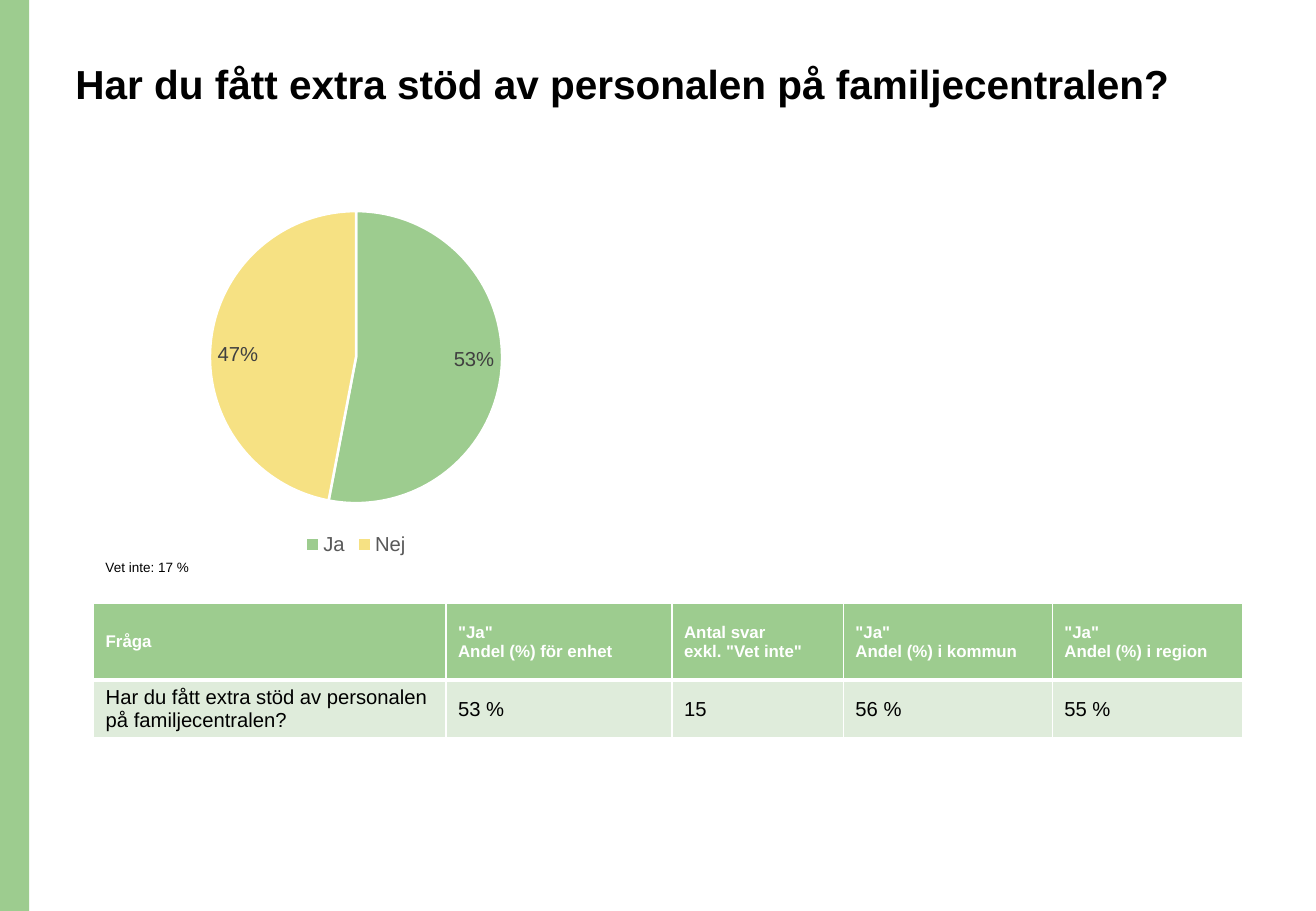
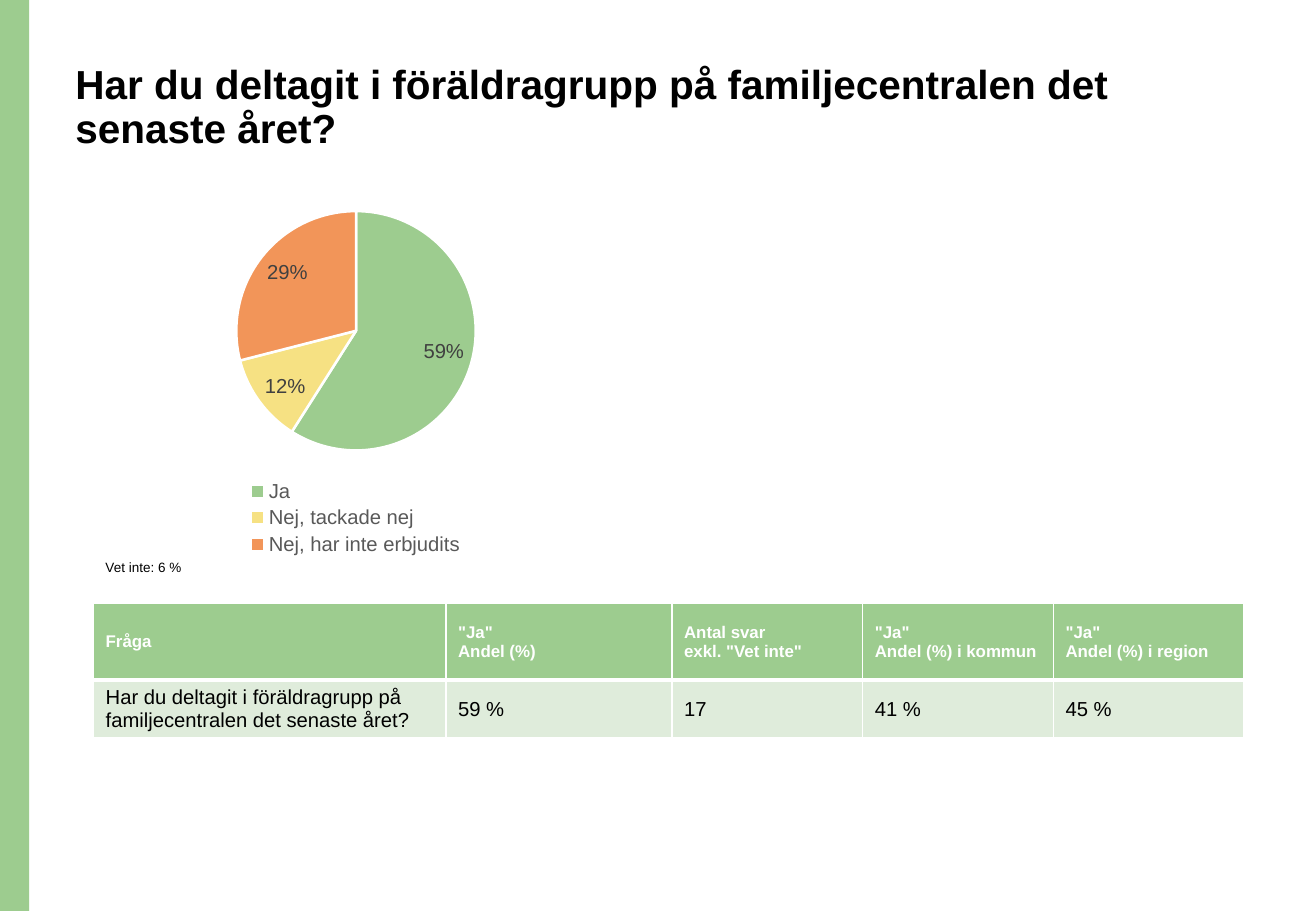
from lxml import etree
from pptx import Presentation
from pptx.chart.data import CategoryChartData
from pptx.dml.color import RGBColor
from pptx.enum.chart import XL_CHART_TYPE, XL_LABEL_POSITION, XL_LEGEND_POSITION
from pptx.enum.shapes import MSO_SHAPE
from pptx.enum.text import MSO_ANCHOR, MSO_AUTO_SIZE, PP_ALIGN
from pptx.oxml.ns import qn
from pptx.util import Pt

PIE = XL_CHART_TYPE.PIE
INSIDE_END = XL_LABEL_POSITION.INSIDE_END
BOTTOM = XL_LEGEND_POSITION.BOTTOM
RECTANGLE = MSO_SHAPE.RECTANGLE
TOP, MIDDLE = MSO_ANCHOR.TOP, MSO_ANCHOR.MIDDLE
NO_AUTOFIT = MSO_AUTO_SIZE.NONE
LEFT = PP_ALIGN.LEFT

GREEN = RGBColor(0x9D, 0xCC, 0x8F)
PALE_GREEN = RGBColor(0xDF, 0xEC, 0xDB)
YELLOW = RGBColor(0xF6, 0xE1, 0x83)
ORANGE = RGBColor(0xF2, 0x95, 0x59)
WHITE = RGBColor(0xFF, 0xFF, 0xFF)
BLACK = RGBColor(0, 0, 0)
LABEL_GREY = RGBColor(0x40, 0x40, 0x40)
LEGEND_GREY = RGBColor(0x59, 0x59, 0x59)
SLICE_COLORS = (GREEN, YELLOW, ORANGE)

FONT = "Arial"
PERCENT_FORMAT = '[<0.01]"";[>0.01]0%'
EMU_PER_PX = 9144
WIDTH, HEIGHT = 1083, 750
BAND_WIDTH = 24
TITLE_AREA = (52, 48, 934, 102)
CHART_AREA = (122, 160, 342, 301)
NOTE_AREA = (77, 449, 210, 48)
TABLE_LEFT, TABLE_TOP = 77, 497
ROW_HEIGHTS = (63, 45)

QUESTIONS = [
    {
        "title": "Har du fått extra stöd av personalen på familjecentralen?",
        "answers": {"Ja": 0.53, "Nej": 0.47},
        "note": "Vet inte: 17 %",
        "unit_header": '"Ja"\nAndel (%) för enhet',
        "results": ["53 %", "15", "56 %", "55 %"],
        "columns": [290, 186, 141, 172, 157],
    },
    {
        "title": "Har du deltagit i föräldragrupp på familjecentralen det senaste året?",
        "answers": {"Ja": 0.59, "Nej, tackade nej": 0.12, "Nej, har inte erbjudits": 0.29},
        "note": "Vet inte: 6 %",
        "unit_header": '"Ja"\nAndel (%)',
        "results": ["59 %", "17", "41 %", "45 %"],
        "columns": [290, 186, 157, 157, 157],
    },
]
OTHER_HEADERS = [
    'Antal svar\nexkl. "Vet inte"',
    '"Ja"\nAndel (%) i kommun',
    '"Ja"\nAndel (%) i region',
]


def px(*lengths):
    return [length * EMU_PER_PX for length in lengths]


def set_font(font, size, color, bold=False):
    font.name, font.size, font.bold = FONT, Pt(size), bold
    font.color.rgb = color


def add_band(deck, page):
    band = page.shapes.add_shape(RECTANGLE, *px(0, 0, BAND_WIDTH, HEIGHT))
    band.shadow.inherit = False
    band.fill.solid()
    band.fill.fore_color.rgb = GREEN
    band.line.fill.background()
    deck.slide_master.shapes.element.insert(2, band.element)


def add_title(page, text):
    title = page.shapes.title
    title.left, title.top, title.width, title.height = px(*TITLE_AREA)
    frame = title.text_frame
    frame.text = text
    frame.vertical_anchor = TOP
    frame.auto_size = NO_AUTOFIT
    para = frame.paragraphs[0]
    para.alignment = LEFT
    para.line_spacing = 0.9
    set_font(para.font, 24, BLACK, True)


def add_pie(page, answers):
    data = CategoryChartData()
    data.categories = list(answers)
    data.add_series("Series 1", list(answers.values()))
    chart = page.shapes.add_chart(PIE, *px(*CHART_AREA), data).chart
    set_font(chart.font, 10, BLACK)
    chart.has_title = False
    chart.has_legend = True
    chart.legend.position = BOTTOM
    chart.legend.include_in_layout = False
    set_font(chart.legend.font, 12, LEGEND_GREY)
    plot = chart.plots[0]
    plot.vary_by_categories = True
    series = plot.series[0]
    for index, color in enumerate(SLICE_COLORS[:len(answers)]):
        style = series.points[index].format
        style.fill.solid()
        style.fill.fore_color.rgb = color
        style.line.color.rgb = WHITE
        style.line.width = Pt(1.5)
    labels = series.data_labels
    labels.show_value = True
    labels.show_percentage = False
    labels.number_format = PERCENT_FORMAT
    labels.number_format_is_linked = False
    labels.position = INSIDE_END
    set_font(labels.font, 12, LABEL_GREY)


def set_borders(cell, top, bottom):
    properties = cell._tc.get_or_add_tcPr()
    widths = {"lnL": 1, "lnR": 1, "lnT": top, "lnB": bottom}
    for index, (side, width) in enumerate(widths.items()):
        line = etree.Element(qn(f"a:{side}"), w=str(Pt(width)))
        fill = etree.SubElement(line, qn("a:solidFill"))
        etree.SubElement(fill, qn("a:srgbClr"), val=str(WHITE))
        properties.insert(index, line)


def add_result_table(page, question):
    columns = question["columns"]
    rows = [
        ["Fråga", question["unit_header"], *OTHER_HEADERS],
        [question["title"], *question["results"]],
    ]
    styles = [(GREEN, 10, WHITE, True, 1, 3), (PALE_GREEN, 12, BLACK, False, 3, 1)]
    area = px(TABLE_LEFT, TABLE_TOP, sum(columns), sum(ROW_HEIGHTS))
    table = page.shapes.add_table(len(rows), len(columns), *area).table
    for column, width in zip(table.columns, px(*columns)):
        column.width = width
    for row, height, texts, style in zip(table.rows, px(*ROW_HEIGHTS), rows, styles):
        fill, size, color, bold, top, bottom = style
        row.height = height
        for cell, text in zip(row.cells, texts):
            cell.text = text
            cell.vertical_anchor = MIDDLE
            cell.fill.solid()
            cell.fill.fore_color.rgb = fill
            set_borders(cell, top, bottom)
            for para in cell.text_frame.paragraphs:
                set_font(para.font, size, color, bold)


def add_note(page, text):
    frame = page.shapes.add_textbox(*px(*NOTE_AREA)).text_frame
    frame.word_wrap = True
    frame.text = text
    para = frame.paragraphs[0]
    para.line_spacing = 1.5
    set_font(para.font, 8, BLACK)


def main():
    deck = Presentation()
    deck.slide_width, deck.slide_height = px(WIDTH, HEIGHT)
    title_only = deck.slide_layouts[5]
    pages = [deck.slides.add_slide(title_only) for _ in QUESTIONS]
    add_band(deck, pages[0])
    for page, question in zip(pages, QUESTIONS):
        add_title(page, question["title"])
        add_pie(page, question["answers"])
        add_result_table(page, question)
        add_note(page, question["note"])
    deck.save("out.pptx")


if __name__ == "__main__":
    main()
